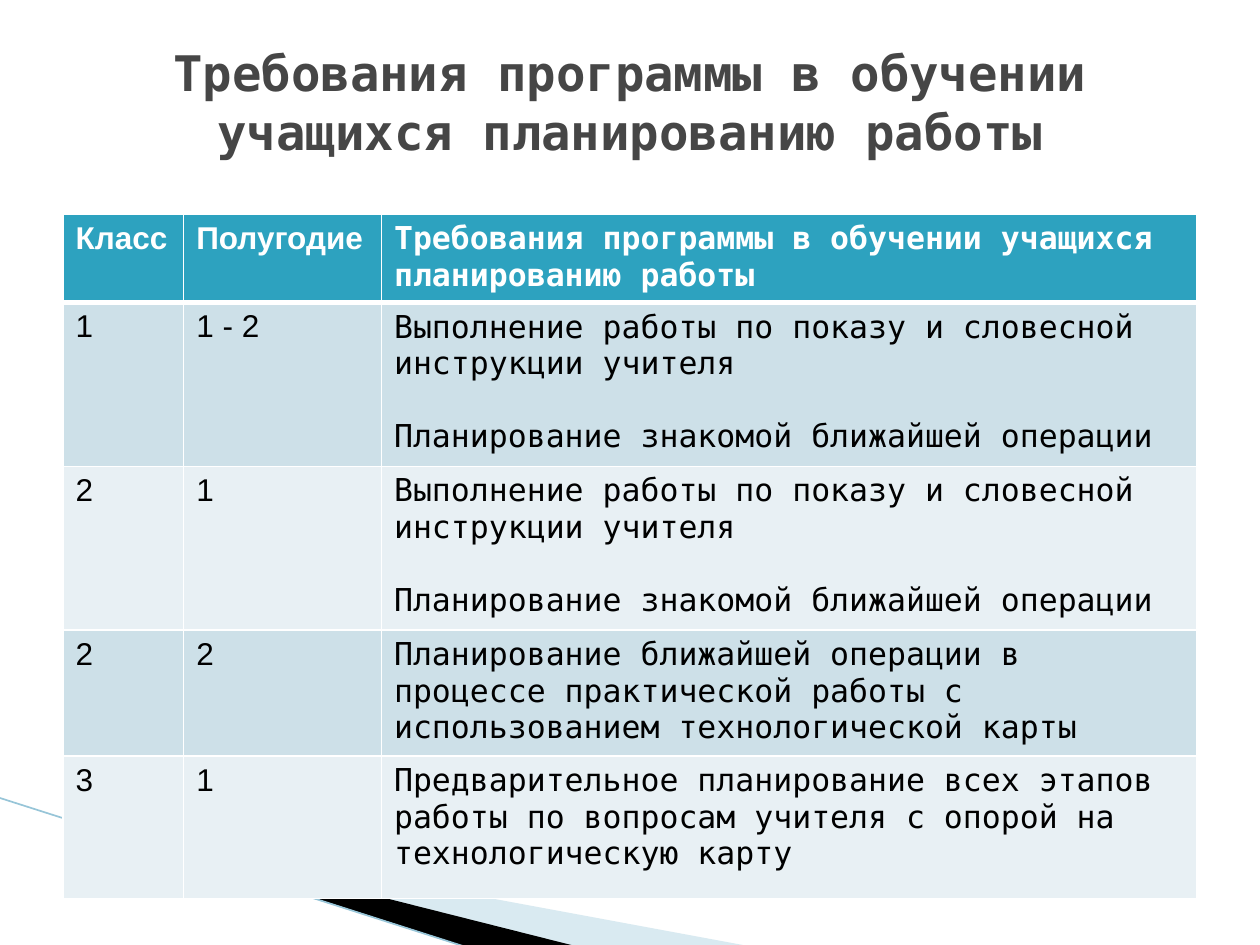
"""Build the slide on programme requirements for teaching pupils to plan their work."""
from lxml import etree
from pptx import Presentation
from pptx.dml.color import RGBColor
from pptx.enum.shapes import MSO_CONNECTOR
from pptx.enum.text import MSO_ANCHOR, PP_ALIGN
from pptx.oxml import parse_xml
from pptx.oxml.ns import nsdecls, qn
from pptx.util import Pt

STRAIGHT = MSO_CONNECTOR.STRAIGHT
MIDDLE = MSO_ANCHOR.MIDDLE
LEFT, CENTER = PP_ALIGN.LEFT, PP_ALIGN.CENTER

WHITE = RGBColor(0xFF, 0xFF, 0xFF)
BLACK = RGBColor(0x00, 0x00, 0x00)
TITLE_GRAY = RGBColor(0x46, 0x46, 0x46)
HEADER_TEAL = RGBColor(0x2D, 0xA2, 0xBF)
BAND_DARK = RGBColor(0xCD, 0xE0, 0xE8)
BAND_LIGHT = RGBColor(0xE8, 0xF0, 0xF4)
WEDGE_BLUE = RGBColor(0xA0, 0xCB, 0xDC)
EDGE_BLUE = RGBColor(0x97, 0xC5, 0xD8)

SANS, MONO = "Arial", "DejaVu Sans Mono"
HEADING = "Требования программы в обучении учащихся планированию работы"
FIRST_STEPS = (
    "Выполнение работы по показу и словесной инструкции учителя\n"
    "Планирование знакомой ближайшей операции"
)
ROWS = [
    ("Класс", "Полугодие", HEADING),
    ("1", "1 - 2", FIRST_STEPS),
    ("2", "1", FIRST_STEPS),
    ("2", "2", "Планирование ближайшей операции в процессе практической работы "
               "с использованием технологической карты"),
    ("3", "1", "Предварительное планирование всех этапов работы по вопросам "
               "учителя с опорой на технологическую карту"),
]
COLUMN_WIDTHS = [69, 113, 466]
ROW_HEIGHTS = [50.5, 93.6, 93.6, 72, 81.3]


def write_text(frame, text, font=MONO, size=18, color=BLACK, bold=False,
               align=LEFT, gap=21):
    frame.word_wrap = True
    for index, line in enumerate(text.split("\n")):
        paragraph = frame.paragraphs[0] if index == 0 else frame.add_paragraph()
        paragraph.alignment = align
        paragraph.space_before = Pt(gap if index else 0)
        run = paragraph.add_run()
        run.text = line
        run.font.name = font
        run.font.size = Pt(size)
        run.font.bold = bold
        run.font.color.rgb = color


prs = Presentation()
prs.slide_width, prs.slide_height = Pt(720), Pt(540)
slide = prs.slides.add_slide(prs.slide_layouts[5])
shapes = slide.shapes

title = shapes.title
title.left, title.top, title.width, title.height = Pt(36), Pt(21.6), Pt(648), Pt(72.7)
title.text_frame.vertical_anchor = MIDDLE
write_text(title.text_frame, HEADING, size=28, color=TITLE_GRAY, bold=True, align=CENTER)

wedges = [
    (WEDGE_BLUE, 40, [(39.6, 468.7), (428.4, 540.7), (328.3, 540.7), (39.6, 468)]),
    (BLACK, 100, [(38.2, 467.3), (329, 540.7), (267.8, 541.4), (38.9, 468)]),
]
for color, opacity, points in wedges:
    (start_x, start_y), *corners = points
    builder = shapes.build_freeform(Pt(start_x), Pt(start_y))
    builder.add_line_segments([(Pt(x), Pt(y)) for x, y in corners])
    wedge = builder.convert_to_shape()
    wedge.shadow.inherit = False
    wedge.line.fill.background()
    wedge.fill.solid()
    wedge.fill.fore_color.rgb = color
    if opacity < 100:
        tint = wedge.fill._xPr.find(qn("a:solidFill"))[0]
        etree.SubElement(tint, qn("a:alpha")).set("val", str(opacity * 1000))

edge = shapes.add_connector(STRAIGHT, Pt(-0.7), Pt(455.8), Pt(267.1), Pt(541.4))
edge.line.color.rgb = EDGE_BLUE
edge.line.width = Pt(0.95)
etree.SubElement(edge._element.spPr, qn("a:effectLst"))

table = shapes.add_table(len(ROWS), len(COLUMN_WIDTHS), Pt(36), Pt(122.4),
                         Pt(sum(COLUMN_WIDTHS)), Pt(sum(ROW_HEIGHTS))).table
for column, width in zip(table.columns, COLUMN_WIDTHS):
    column.width = Pt(width)
for row_index, (texts, height) in enumerate(zip(ROWS, ROW_HEIGHTS)):
    table.rows[row_index].height = Pt(height)
    is_header = row_index == 0
    band = HEADER_TEAL if is_header else (BAND_LIGHT, BAND_DARK)[row_index % 2]
    for column_index, text in enumerate(texts):
        cell = table.cell(row_index, column_index)
        write_text(cell.text_frame, text, font=MONO if column_index == 2 else SANS,
                   color=WHITE if is_header else BLACK, bold=is_header)
        borders = {"lnL": 1, "lnR": 1, "lnT": 3 if row_index == 1 else 1,
                   "lnB": 3 if is_header else 1}
        for side, weight in borders.items():
            cell._tc.get_or_add_tcPr().append(parse_xml(
                f'<a:{side} {nsdecls("a")} w="{Pt(weight)}"><a:solidFill>'
                f'<a:srgbClr val="{WHITE}"/></a:solidFill></a:{side}>'))
        cell.fill.solid()
        cell.fill.fore_color.rgb = band

prs.save("out.pptx")
